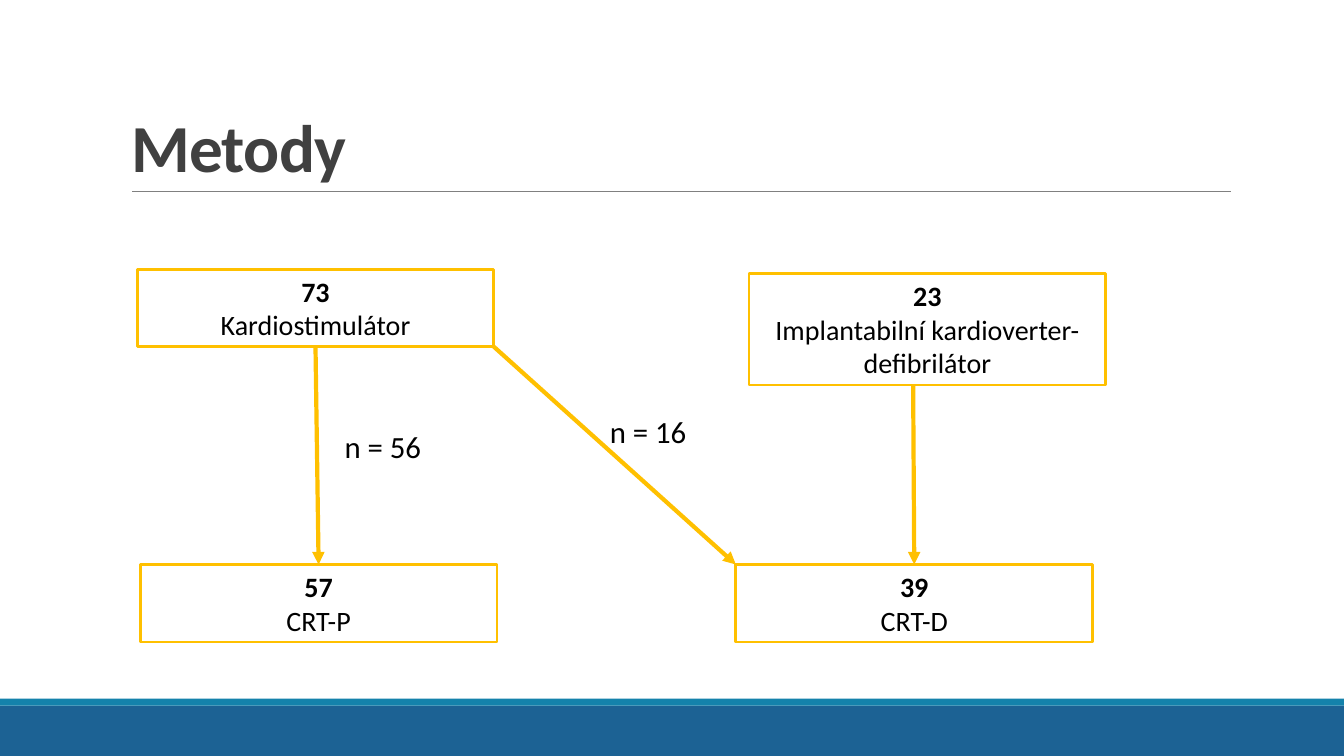
from lxml import etree
from pptx import Presentation
from pptx.dml.color import RGBColor
from pptx.enum.shapes import MSO_CONNECTOR, MSO_SHAPE
from pptx.enum.text import MSO_ANCHOR, MSO_AUTO_SIZE, PP_ALIGN
from pptx.oxml.ns import qn
from pptx.util import Inches, Pt

RECT = MSO_SHAPE.RECTANGLE
STRAIGHT = MSO_CONNECTOR.STRAIGHT
LEFT, CENTER = PP_ALIGN.LEFT, PP_ALIGN.CENTER
MIDDLE, BOTTOM = MSO_ANCHOR.MIDDLE, MSO_ANCHOR.BOTTOM
NO_FIT = MSO_AUTO_SIZE.NONE

BLACK = RGBColor(0x00, 0x00, 0x00)
DARK = RGBColor(0x40, 0x40, 0x40)
GRAY = RGBColor(0x80, 0x80, 0x80)
GOLD = RGBColor(0xFF, 0xC0, 0x00)
BLUE = RGBColor(0x1C, 0x62, 0x94)
TEAL = RGBColor(0x14, 0x82, 0xAB)

FONT = "Calibri"
WIDTH, HEIGHT = Inches(13.33), Inches(7.5)
BOX_W, BOX_H = 26.55, 10.27
LOWER_ROW = 74.67


def px(share):
    return int(WIDTH * share / 100)


def py(share):
    return int(HEIGHT * share / 100)


def area(x, y, w, h):
    return px(x), py(y), px(w), py(h)


def add_text(p, text, size=20, color=BLACK, bold=False, align=LEFT):
    p.alignment = align
    r = p.add_run()
    r.text = text
    r.font.name, r.font.size = FONT, Pt(size)
    r.font.color.rgb, r.font.bold = color, bold
    return r


def add_title(s, text):
    sp = s.shapes.title
    sp.left, sp.top, sp.width, sp.height = area(9, 4.13, 82.5, 21.2)
    tf = sp.text_frame
    tf.auto_size, tf.word_wrap = NO_FIT, True
    tf.vertical_anchor = BOTTOM
    p = tf.paragraphs[0]
    p.line_spacing = 0.85
    r = add_text(p, text, size=48, color=DARK, bold=True)
    r.font._element.set("spc", "-50")


def add_band(s, y, h, color):
    sp = s.shapes.add_shape(RECT, *area(0, y, 100, h))
    sp.shadow.inherit = False
    sp.fill.solid()
    sp.fill.fore_color.rgb = color
    sp.line.fill.background()


def add_box(s, x, y, count, name, h=BOX_H):
    sp = s.shapes.add_shape(RECT, *area(x, y, BOX_W, h))
    sp.shadow.inherit = False
    sp.fill.background()
    sp.line.color.rgb, sp.line.width = GOLD, Pt(2)
    tf = sp.text_frame
    tf.word_wrap, tf.vertical_anchor = True, MIDDLE
    add_text(tf.paragraphs[0], count, bold=True, align=CENTER)
    add_text(tf.add_paragraph(), name, align=CENTER)
    return sp


def add_line(s, x1, y1, x2, y2, color, width):
    line = s.shapes.add_connector(STRAIGHT, x1, y1, x2, y2)
    line.line.color.rgb, line.line.width = color, Pt(width)
    etree.SubElement(line._element.spPr, qn("a:effectLst"))
    return line


def add_arrow(s, upper, lower, start=0.5, end=0.5):
    arrow = add_line(s, upper.left + int(upper.width * start), upper.top + upper.height,
                     lower.left + int(lower.width * end), lower.top, GOLD, 3)
    etree.SubElement(arrow.line._get_or_add_ln(), qn("a:tailEnd"), type="triangle")


def add_label(s, x, y, text):
    tf = s.shapes.add_textbox(*area(x, y, 10, 6.27)).text_frame
    tf.word_wrap = True
    add_text(tf.paragraphs[0], text, size=22)


def main():
    prs = Presentation()
    prs.slide_width, prs.slide_height = WIDTH, HEIGHT
    s = prs.slides.add_slide(prs.slide_layouts[5])

    add_band(s, 93.33, 6.67, BLUE)
    add_band(s, 92.4, 0.93, TEAL)
    add_line(s, px(9.83), py(25.33), px(91.6), py(25.33), GRAY, 0.5)
    add_title(s, "Metody")

    pacemaker = add_box(s, 10.2, 35.6, "73", "Kardiostimulátor")
    defibrillator = add_box(s, 55.73, 36.13, "23", "Implantabilní kardioverter-defibrilátor", h=14.8)
    crt_p = add_box(s, 10.43, LOWER_ROW, "57", "CRT-P")
    crt_d = add_box(s, 54.75, LOWER_ROW, "39", "CRT-D")

    add_arrow(s, pacemaker, crt_p)
    add_arrow(s, defibrillator, crt_d, start=0.46)
    add_arrow(s, pacemaker, crt_d, start=1, end=0)
    add_label(s, 44.64, 54, "n = 16")
    add_label(s, 24.9, 55.87, "n = 56")

    prs.save("out.pptx")


if __name__ == "__main__":
    main()
